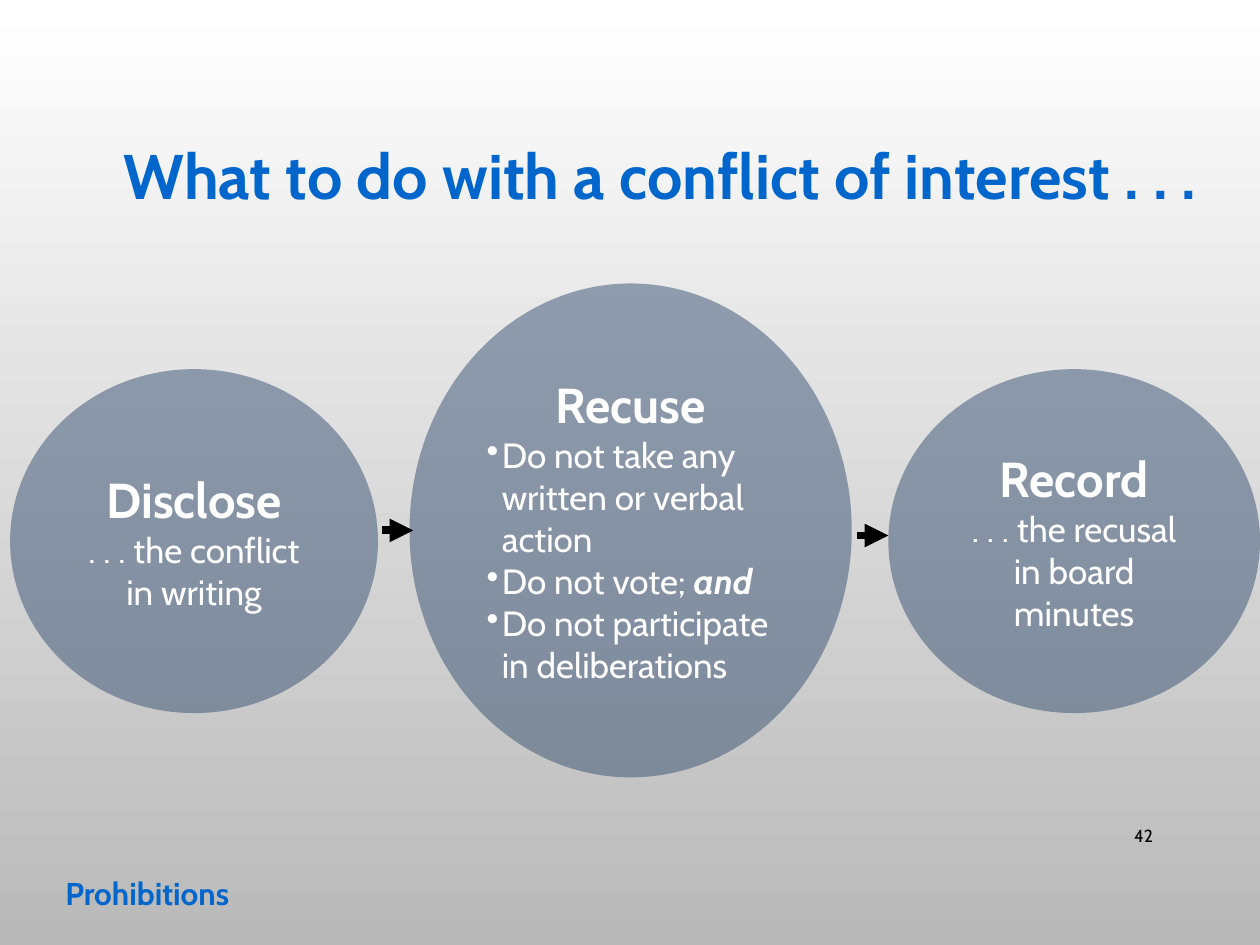
from pptx import Presentation
from pptx import util as u
from pptx.dml.color import RGBColor
from pptx.enum import shapes, text
from lxml import etree
from pptx.oxml.ns import qn

FONT, BLUE, SLATE, WHITE, BLACK = "Cabin", "0066CC", "355071", "FFFFFF", "000000"
CENTER = text.PP_ALIGN.CENTER
MIDDLE = text.MSO_ANCHOR.MIDDLE

TITLE = "What to do with a conflict of interest . . ."
TOPIC = "Prohibitions"
PAGE = "42"
# heading, place (left, top, width, height), bulleted, paragraphs of (text, emphasised)
STEPS = [
    ("Disclose", (0.08, 2.93, 2.92, 2.73), False,
     [[(". . . the conflict in writing", False)]]),
    ("Recuse", (3.25, 2.25, 3.51, 3.92), True,
     [[("Do not take any written or verbal action", False)],
      [("Do not vote; ", False), ("and", True)],
      [("Do not participate in deliberations", False)]]),
    ("Record", (7.05, 2.93, 2.95, 2.73), False,
     [[(". . . the recusal in board minutes", False)]]),
]
ARROW_STARTS = [(3.03, 4.21), (6.8, 4.25)]
ARROW_LENGTH = 0.25


def color(value):
    return RGBColor.from_string(value)


def style(run, size, value, bold=False, italic=False):
    font = run.font
    font.name, font.size = FONT, u.Pt(size)
    font.bold, font.italic = bold, italic
    font.color.rgb = color(value)


def add_label(slide, place, words, size, value, bold, align, anchor, wrap=True):
    frame = slide.shapes.add_textbox(*map(u.Inches, place)).text_frame
    frame.word_wrap, frame.vertical_anchor = wrap, anchor
    line = frame.paragraphs[0]
    line.text, line.alignment = words, align
    style(line.runs[0], size, value, bold)
    return line


def add_bullet(paragraph):
    props = paragraph._p.get_or_add_pPr()
    indent = u.Inches(0.12)
    props.set("marL", str(indent))
    props.set("indent", str(-indent))
    etree.SubElement(props, qn("a:buChar"), char="•")


def add_step(slide, heading, place, bulleted, paragraphs):
    oval = slide.shapes.add_shape(shapes.MSO_SHAPE.OVAL, *map(u.Inches, place))
    oval.shadow.inherit = False
    oval.line.fill.background()
    oval.fill.solid()
    oval.fill.fore_color.rgb = color(SLATE)
    tint = oval.fill._xPr.find(qn("a:solidFill"))[0]
    etree.SubElement(tint, qn("a:alpha"), val="50000")

    frame = oval.text_frame
    frame.word_wrap, frame.vertical_anchor = True, MIDDLE
    top = frame.paragraphs[0]
    top.text, top.alignment = heading, CENTER
    style(top.runs[0], 28, WHITE, bold=True)
    for parts in paragraphs:
        paragraph = frame.add_paragraph()
        paragraph.alignment = text.PP_ALIGN.LEFT if bulleted else CENTER
        if bulleted:
            add_bullet(paragraph)
        for words, strong in parts:
            run = paragraph.add_run()
            run.text = words
            style(run, 20, WHITE, strong, strong)


def add_arrow(slide, x, y):
    arrow = slide.shapes.add_connector(
        shapes.MSO_CONNECTOR.STRAIGHT,
        *map(u.Inches, (x, y, x + ARROW_LENGTH, y)))
    arrow.line.width = u.Pt(4.5)
    arrow.line.color.rgb = color(BLACK)
    etree.SubElement(arrow.line._get_or_add_ln(), qn("a:tailEnd"), type="triangle")
    etree.SubElement(arrow._element.spPr, qn("a:effectLst"))


def main():
    deck = Presentation()
    deck.slide_width, deck.slide_height = u.Inches(10), u.Inches(7.5)
    slide = deck.slides.add_slide(deck.slide_layouts[6])

    backdrop = slide.background.fill
    backdrop.gradient()
    backdrop.gradient_angle = 270
    for stop, value in zip(backdrop.gradient_stops, (WHITE, "B9B9B9")):
        stop.color.rgb = color(value)

    title = add_label(slide, (0.74, 0.89, 9, 1.07), TITLE, 36, BLUE, True, CENTER, MIDDLE)
    title.line_spacing = 0.9
    add_label(slide, (8.62, 6.43, 0.63, 0.4), PAGE, 10, BLACK, False,
              text.PP_ALIGN.RIGHT, MIDDLE)
    for step in STEPS:
        add_step(slide, *step)
    for start in ARROW_STARTS:
        add_arrow(slide, *start)
    add_label(slide, (0.42, 6.89, 1.57, 0.4), TOPIC, 18, BLUE, True,
              text.PP_ALIGN.LEFT, text.MSO_ANCHOR.TOP, wrap=False)
    deck.save("out.pptx")


if __name__ == "__main__":
    main()
